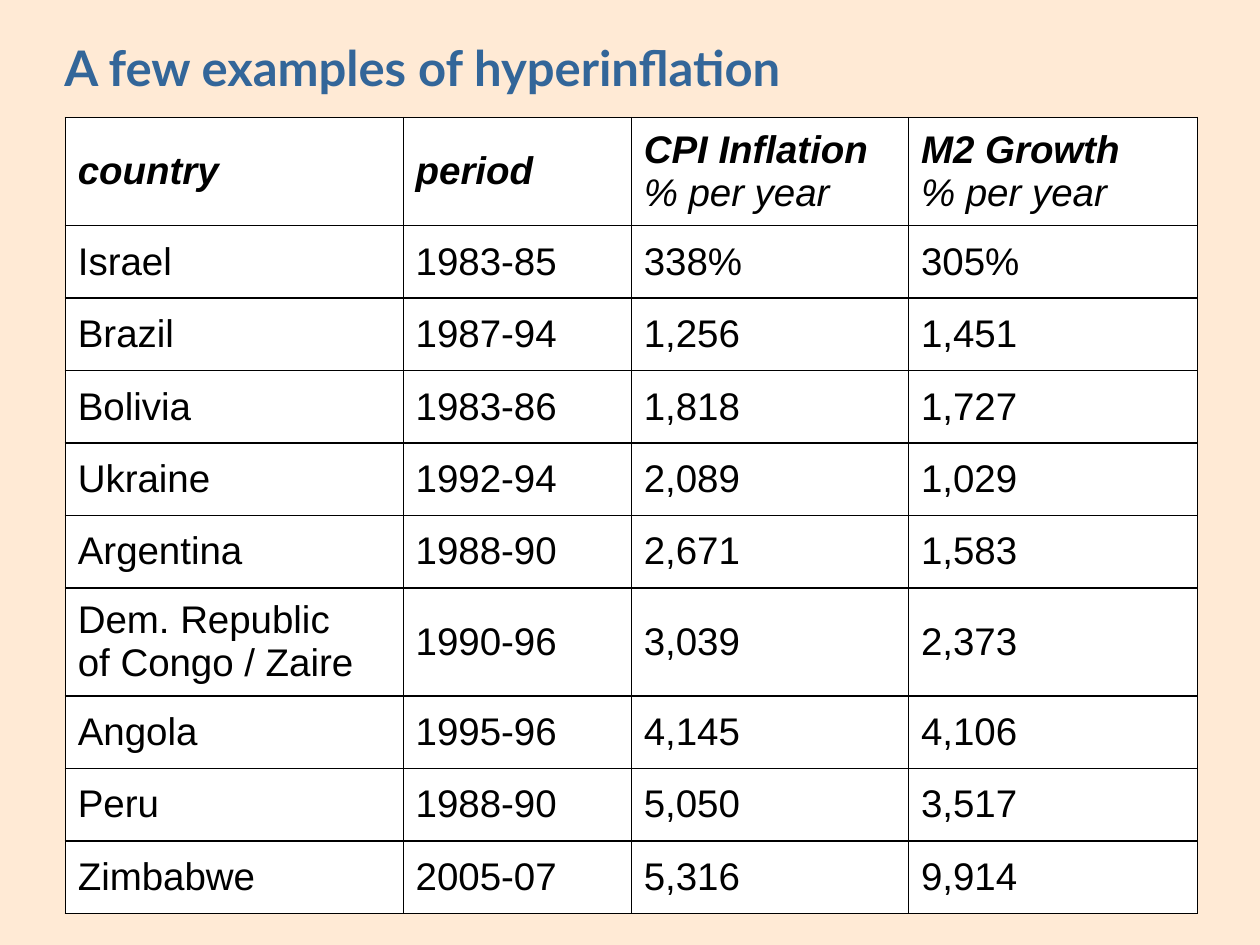
from dataclasses import dataclass
from typing import Any

from lxml import etree
from pptx import Presentation
from pptx import util as u
from pptx.dml.color import RGBColor
from pptx.enum import text
from pptx.oxml import ns


@dataclass(frozen=True)
class Theme:
    background: str = "FFEAD5"
    title: str = "336699"
    ink: str = "000000"
    cell: str = "FFFFFF"
    title_font: str = "Lato"
    table_font: str = "Arial"
    title_size: int = 28
    table_size: int = 22
    border_width: int = 1


@dataclass(frozen=True)
class Line:
    words: str
    bold: bool = False
    italic: bool = False


@dataclass(frozen=True)
class Example:
    country: str
    period: str
    inflation: str
    growth: str

    def cells(self) -> list[list[Line]]:
        values = (self.country, self.period, self.inflation, self.growth)
        return [[Line(words) for words in value.split("\n")] for value in values]


THEME = Theme()
COLUMN_WIDTHS = (6.81, 4.6, 5.59, 5.82)
SINGLE_ROW, DOUBLE_ROW = 1.46, 2.18
UNIT = Line("% per year", italic=True)
HEADINGS = [
    [Line("country", True, True)],
    [Line("period", True, True)],
    [Line("CPI Inflation", True, True), UNIT],
    [Line("M2 Growth", True, True), UNIT],
]
EXAMPLES = (
    Example("Israel", "1983-85", "338%", "305%"),
    Example("Brazil", "1987-94", "1,256", "1,451"),
    Example("Bolivia", "1983-86", "1,818", "1,727"),
    Example("Ukraine", "1992-94", "2,089", "1,029"),
    Example("Argentina", "1988-90", "2,671", "1,583"),
    Example("Dem. Republic\nof Congo / Zaire", "1990-96", "3,039", "2,373"),
    Example("Angola", "1995-96", "4,145", "4,106"),
    Example("Peru", "1988-90", "5,050", "3,517"),
    Example("Zimbabwe", "2005-07", "5,316", "9,914"),
)


def apply(target: Any, formats: dict[str, Any]) -> None:
    for name, value in formats.items():
        setattr(target, name, value)


def add_span(para: Any, line: Line, font: str, size: int, color: str) -> None:
    span = para.add_run()
    span.text = line.words
    apply(span.font, {"name": font, "size": u.Pt(size),
                      "bold": line.bold, "italic": line.italic})
    span.font.color.rgb = RGBColor.from_string(color)


def add_title(page: Any, words: str) -> None:
    box = page.shapes.title
    apply(box, {"left": u.Cm(1.3), "top": u.Cm(0.41),
                "width": u.Cm(22.91), "height": u.Cm(1.83)})
    apply(box.text_frame, {
        "margin_left": 0, "margin_right": 0, "margin_top": 0, "margin_bottom": 0,
        "word_wrap": True, "auto_size": text.MSO_AUTO_SIZE.NONE,
        "vertical_anchor": text.MSO_ANCHOR.MIDDLE})
    para = box.text_frame.paragraphs[0]
    apply(para, {"alignment": text.PP_ALIGN.LEFT, "line_spacing": 1.05})
    add_span(para, Line(words, bold=True), THEME.title_font, THEME.title_size, THEME.title)


def add_borders(cell: Any) -> None:
    properties = cell._tc.get_or_add_tcPr()
    for side in ("L", "R", "T", "B"):
        edge = etree.SubElement(properties, ns.qn(f"a:ln{side}"),
                                w=str(u.Pt(THEME.border_width)))
        fill = etree.SubElement(edge, ns.qn("a:solidFill"))
        etree.SubElement(fill, ns.qn("a:srgbClr"), val=THEME.ink)


def fill_cell(cell: Any, lines: list[Line]) -> None:
    apply(cell, {"vertical_anchor": text.MSO_ANCHOR.MIDDLE,
                 "margin_left": u.Cm(0.25), "margin_right": u.Cm(0.25),
                 "margin_top": u.Cm(0.13), "margin_bottom": u.Cm(0.13)})
    add_borders(cell)
    cell.fill.solid()
    cell.fill.fore_color.rgb = RGBColor.from_string(THEME.cell)
    para = cell.text_frame.paragraphs[0]
    for index, line in enumerate(lines):
        if index:
            para.add_line_break()
        add_span(para, line, THEME.table_font, THEME.table_size, THEME.ink)


def add_examples(page: Any) -> None:
    rows = [HEADINGS, *(example.cells() for example in EXAMPLES)]
    heights = [DOUBLE_ROW if any(len(lines) > 1 for lines in row) else SINGLE_ROW
               for row in rows]
    table = page.shapes.add_table(
        len(rows), len(COLUMN_WIDTHS), u.Cm(1.32), u.Cm(2.37),
        u.Cm(sum(COLUMN_WIDTHS)), u.Cm(sum(heights))).table
    apply(table, {"first_row": False, "horz_banding": False})
    for column, width in zip(table.columns, COLUMN_WIDTHS):
        column.width = u.Cm(width)
    for table_row, height, row in zip(table.rows, heights, rows):
        table_row.height = u.Cm(height)
        for cell, lines in zip(table_row.cells, row):
            fill_cell(cell, lines)


def main() -> None:
    deck = Presentation()
    apply(deck, {"slide_width": u.Cm(25.4), "slide_height": u.Cm(19.05)})
    page = deck.slides.add_slide(deck.slide_layouts.get_by_name("Title Only"))
    page.background.fill.solid()
    page.background.fill.fore_color.rgb = RGBColor.from_string(THEME.background)
    add_title(page, "A few examples of hyperinflation")
    add_examples(page)
    deck.save("out.pptx")


if __name__ == "__main__":
    main()
